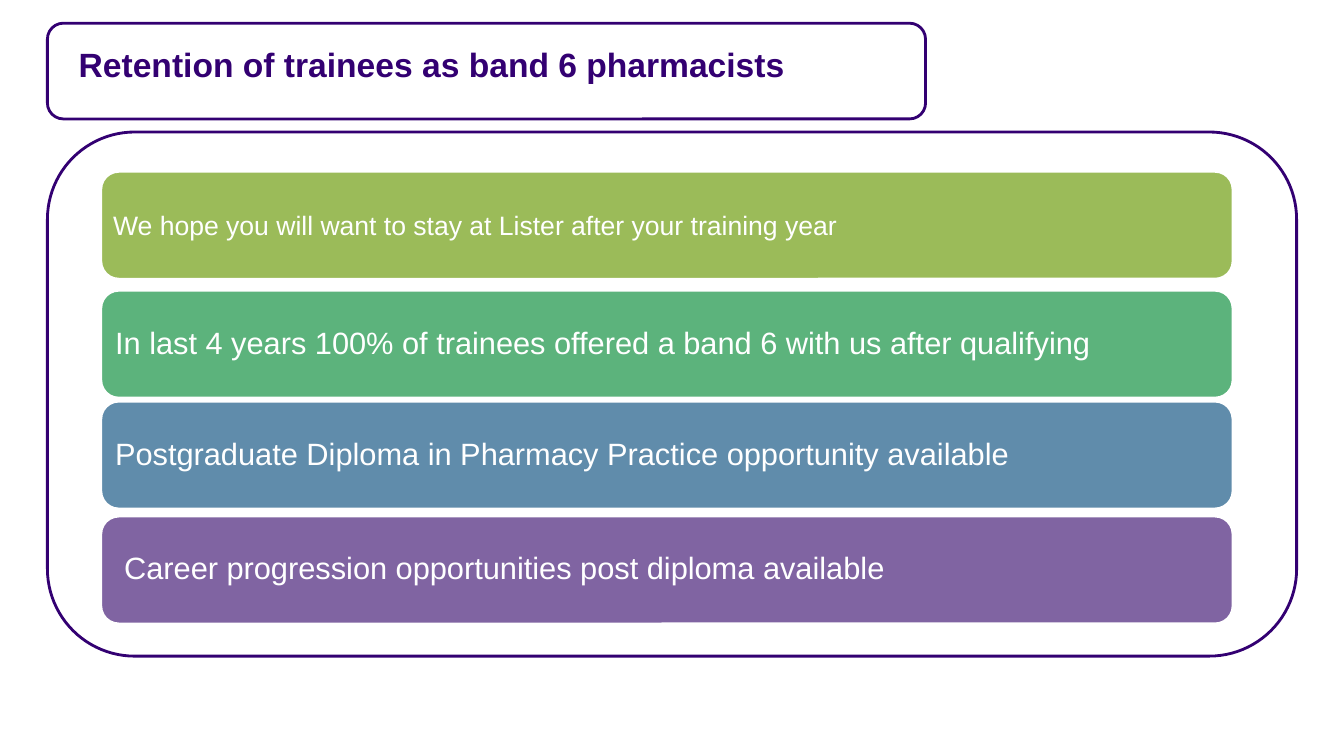
"""Build the slide on retention of trainees as band 6 pharmacists."""
from dataclasses import dataclass

from pptx import Presentation
from pptx.dml.color import RGBColor
from pptx.enum.shapes import MSO_SHAPE
from pptx.enum.text import MSO_ANCHOR, MSO_AUTO_SIZE, PP_ALIGN
from pptx.util import Emu, Pt

ROUNDED = MSO_SHAPE.ROUNDED_RECTANGLE
TOP, MIDDLE = MSO_ANCHOR.TOP, MSO_ANCHOR.MIDDLE
LEFT = PP_ALIGN.LEFT
NO_FIT = MSO_AUTO_SIZE.NONE
EMU_PER_PX = 9144
TITLE_ONLY = 5


@dataclass(frozen=True)
class Theme:
    """Hold the colours, font and sizes of the slide."""
    font: str = "Arial"
    ink: str = "330072"
    white: str = "FFFFFF"
    green: str = "9BBB59"
    teal: str = "5CB37C"
    blue: str = "608CAB"
    purple: str = "8064A2"
    title_size: int = 24
    bar_size: int = 22
    intro_size: int = 19
    line_width: int = 2


@dataclass(frozen=True)
class Area:
    """Describe a rectangle in px."""
    left: int
    top: int
    width: int
    height: int


@dataclass(frozen=True)
class Bar:
    """Describe one message bar."""
    text: str
    top: int
    fill: str
    size: int = Theme.bar_size
    inset: int = 9
    spacing: float = 0.9


THEME = Theme()
CONTENT_PANEL = Area(47, 131, 1239, 520)
TITLE_PANEL = Area(47, 23, 871, 95)
TITLE_AREA = Area(68, 39, 829, 60)
BAR_LEFT, BAR_WIDTH, BAR_HEIGHT = 100, 1123, 107
TITLE = "Retention of trainees as band 6 pharmacists"
BARS = (
    Bar("We hope you will want to stay at Lister after your training year",
        170, THEME.green, THEME.intro_size, 7, 1.0),
    Bar("In last 4 years 100% of trainees offered a band 6 with us after qualifying",
        288, THEME.teal),
    Bar("Postgraduate Diploma in Pharmacy Practice opportunity available",
        398, THEME.blue),
    Bar("Career progression opportunities post diploma available",
        512, THEME.purple, inset=18),
)


def px(length: int) -> Emu:
    """Turn px into EMU."""
    return Emu(length * EMU_PER_PX)


def apply_format(target, values: dict) -> None:
    """Set each attribute of the target from the values."""
    for name, value in values.items():
        setattr(target, name, value)


def add_rounded_box(page, area: Area, fill: str, line: str):
    """Add a rounded rectangle with a solid fill and outline."""
    box = page.shapes.add_shape(
        ROUNDED, px(area.left), px(area.top), px(area.width), px(area.height))
    box.shadow.inherit = False
    box.fill.solid()
    box.fill.fore_color.rgb = RGBColor.from_string(fill)
    box.line.color.rgb = RGBColor.from_string(line)
    box.line.width = Pt(THEME.line_width)
    return box


def write_text(box, text: str, frame_format: dict, font_format: dict,
               color: str, spacing: float = 1.0) -> None:
    """Write one left-aligned paragraph into the box."""
    frame = box.text_frame
    apply_format(frame, {"word_wrap": True, "auto_size": NO_FIT, **frame_format})
    para = frame.paragraphs[0]
    apply_format(para, {"alignment": LEFT, "line_spacing": spacing})
    span = para.add_run()
    span.text = text
    apply_format(span.font, {"name": THEME.font, **font_format})
    span.font.color.rgb = RGBColor.from_string(color)


def add_bar(page, bar: Bar) -> None:
    """Add one coloured bar with its message."""
    area = Area(BAR_LEFT, bar.top, BAR_WIDTH, BAR_HEIGHT)
    box = add_rounded_box(page, area, bar.fill, THEME.white)
    frame_format = {"vertical_anchor": MIDDLE, "margin_left": px(bar.inset)}
    write_text(box, bar.text, frame_format, {"size": Pt(bar.size)},
               THEME.white, bar.spacing)


def place_title(page, panel) -> None:
    """Move the title placeholder onto its panel and fill it."""
    title = page.shapes.title
    panel.element.addnext(title.element)
    apply_format(title, {name: px(getattr(TITLE_AREA, name))
                         for name in ("left", "top", "width", "height")})
    write_text(title, TITLE, {"vertical_anchor": TOP},
               {"size": Pt(THEME.title_size), "bold": True}, THEME.ink)


def main() -> None:
    """Build and save the deck."""
    deck = Presentation()
    apply_format(deck, {"slide_width": px(1333), "slide_height": px(750)})
    page = deck.slides.add_slide(deck.slide_layouts[TITLE_ONLY])
    add_rounded_box(page, CONTENT_PANEL, THEME.white, THEME.ink)
    title_panel = add_rounded_box(page, TITLE_PANEL, THEME.white, THEME.ink)
    place_title(page, title_panel)
    for bar in BARS:
        add_bar(page, bar)
    deck.save("out.pptx")


if __name__ == "__main__":
    main()
